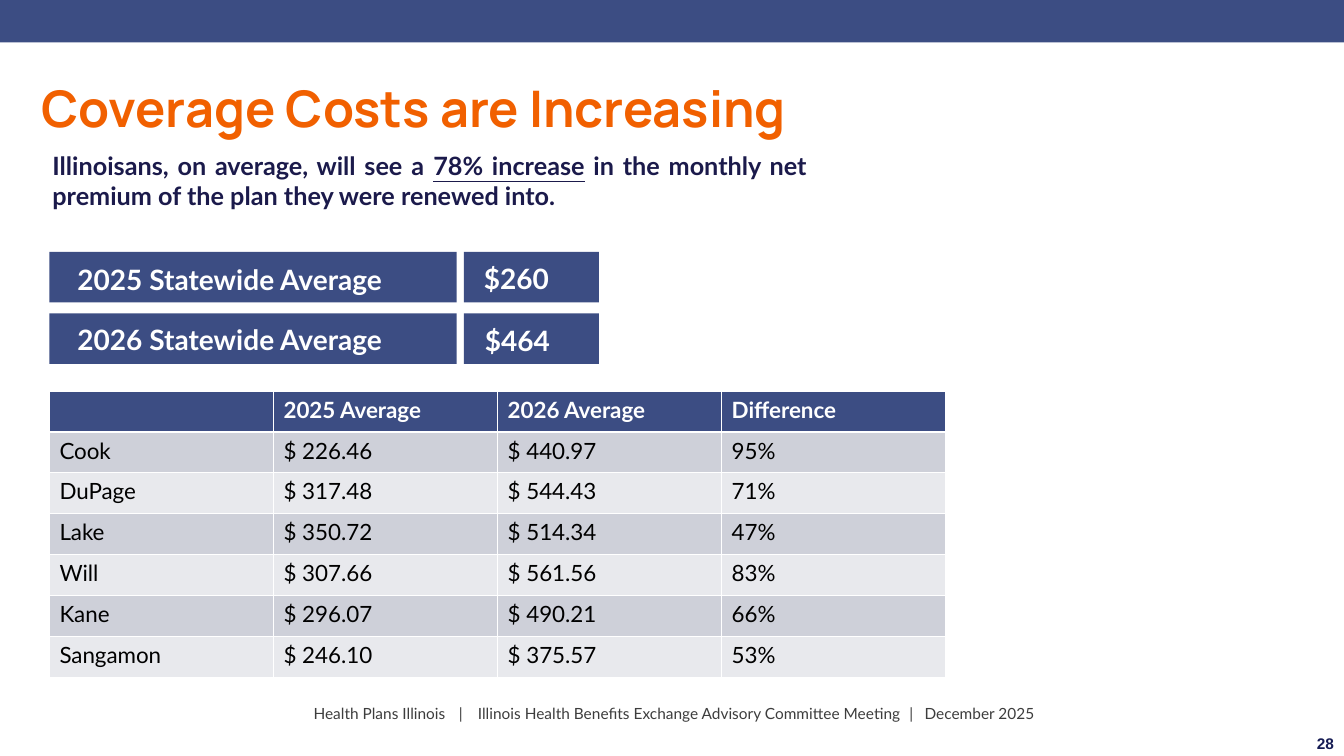
from lxml.etree import SubElement
from pptx import Presentation
from pptx.dml.color import RGBColor
from pptx.enum.shapes import MSO_SHAPE
from pptx.enum.text import MSO_ANCHOR, MSO_AUTO_SIZE, PP_ALIGN
from pptx.oxml.ns import qn
from pptx.util import Inches, Pt

COLORS = {
    "navy": "3C4D83",
    "orange": "F16000",
    "ink": "1B1A4B",
    "number": "161C54",
    "footer": "3D3D3D",
    "white": "FFFFFF",
    "black": "000000",
    "band_dark": "CED0D9",
    "band_light": "E8E9ED",
}


def write(paragraph, text, color, **font_values):
    run = paragraph.add_run()
    run.text = text
    run.font.color.rgb = RGBColor.from_string(COLORS[color])
    for name, value in ({"name": "Lato"} | font_values).items():
        setattr(run.font, name, value)


def place(shape, left, top, width, height, **frame_values):
    box = {"left": left, "top": top, "width": width, "height": height}
    for name, value in box.items():
        setattr(shape, name, Inches(value))
    frame_format = {
        "word_wrap": True,
        "auto_size": MSO_AUTO_SIZE.NONE,
        "vertical_anchor": MSO_ANCHOR.TOP,
    }
    for name, value in (frame_format | frame_values).items():
        setattr(shape.text_frame, name, value)
    return shape.text_frame.paragraphs[0]


presentation = Presentation()
presentation.slide_width = Inches(13.33)
presentation.slide_height = Inches(7.5)
slide = presentation.slides.add_slide(presentation.slide_layouts[1])
shapes = slide.shapes

title = place(shapes.title, 0.31, 0.78, 8.22, 0.65)
title.alignment = PP_ALIGN.LEFT
title.line_spacing = 0.9
write(title, "Coverage Costs are Increasing", "orange", name="Manrope", size=Pt(36), bold=True)

summary = place(slide.placeholders[1], 0.42, 1.44, 7.68, 0.71)
summary.alignment = PP_ALIGN.JUSTIFY
summary.space_before = Pt(0)
summary_properties = summary._p.get_or_add_pPr()
summary_properties.set("marL", "0")
summary_properties.set("indent", "0")
SubElement(summary_properties, qn("a:buNone"))
for text, underline in [
    ("Illinoisans, on average, will see a ", False),
    ("78% increase", True),
    (" in the monthly net premium of the plan they were renewed into.", False),
]:
    write(summary, text, "ink", size=Pt(18), bold=True, underline=underline)

rows = [
    ["", "2025 Average", "2026 Average", "Difference"],
    ["Cook", "$ 226.46", "$ 440.97", "95%"],
    ["DuPage", "$ 317.48", "$ 544.43", "71%"],
    ["Lake", "$ 350.72", "$ 514.34", "47%"],
    ["Will", "$ 307.66", "$ 561.56", "83%"],
    ["Kane", "$ 296.07", "$ 490.21", "66%"],
    ["Sangamon", "$ 246.10", "$ 375.57", "53%"],
]
table = shapes.add_table(
    len(rows), len(rows[0]), Inches(0.49), Inches(3.88), Inches(8.89), Inches(2.84)
).table
for row_index, row in enumerate(rows):
    header = row_index == 0
    band = "navy" if header else ("band_light", "band_dark")[row_index % 2]
    for column_index, text in enumerate(row):
        cell = table.cell(row_index, column_index)
        cell.fill.solid()
        cell.fill.fore_color.rgb = RGBColor.from_string(COLORS[band])
        if text:
            write(cell.text_frame.paragraphs[0], text, "white" if header else "black",
                  size=Pt(16), bold=header)

panels = [(0, 0, 13.33, 0.42)]
labels = []
for top, year, amount, label_top, amount_left, amount_top in [
    (2.5, "2025", "$260", 2.56, 4.7, 2.55),
    (3.11, "2026", "$464", 3.15, 4.71, 3.16),
]:
    panels += [(0.49, top, 4.04, 0.5), (4.6, top, 1.34, 0.5)]
    labels += [
        (f"{year} Statewide Average", 0.67, label_top, 3.75, 0.44),
        (amount, amount_left, amount_top, 1.05, 0.44),
    ]

for panel in panels:
    shape = shapes.add_shape(MSO_SHAPE.RECTANGLE, *map(Inches, panel))
    shape.shadow.inherit = False
    shape.fill.solid()
    shape.fill.fore_color.rgb = RGBColor.from_string(COLORS["navy"])
    shape.line.fill.background()

for text, *box in labels:
    label = place(shapes.add_textbox(0, 0, 0, 0), *box)
    write(label, text, "white", size=Pt(20), bold=True)

footer = place(shapes.add_textbox(0, 0, 0, 0), 2.77, 6.94, 7.84, 0.29, margin_left=Inches(0.34))
tab_list = SubElement(footer._p.get_or_add_pPr(), qn("a:tabLst"))
for position in (1.44, 1.63, 5.91, 6.06):
    SubElement(tab_list, qn("a:tab"), pos=str(Inches(position)), algn="l")
footer_parts = [
    "Health Plans Illinois",
    "|",
    "Illinois Health Benefits Exchange Advisory Committee Meeting",
    "|",
    "December 2025",
]
write(footer, "\t".join(footer_parts), "footer", size=Pt(11))

number = place(shapes.add_textbox(0, 0, 0, 0), 11, 7.23, 2.33, 0.29,
               vertical_anchor=MSO_ANCHOR.MIDDLE)
number.alignment = PP_ALIGN.RIGHT
write(number, "28", "number", name="Arial", size=Pt(11), bold=True)

presentation.save("out.pptx")
